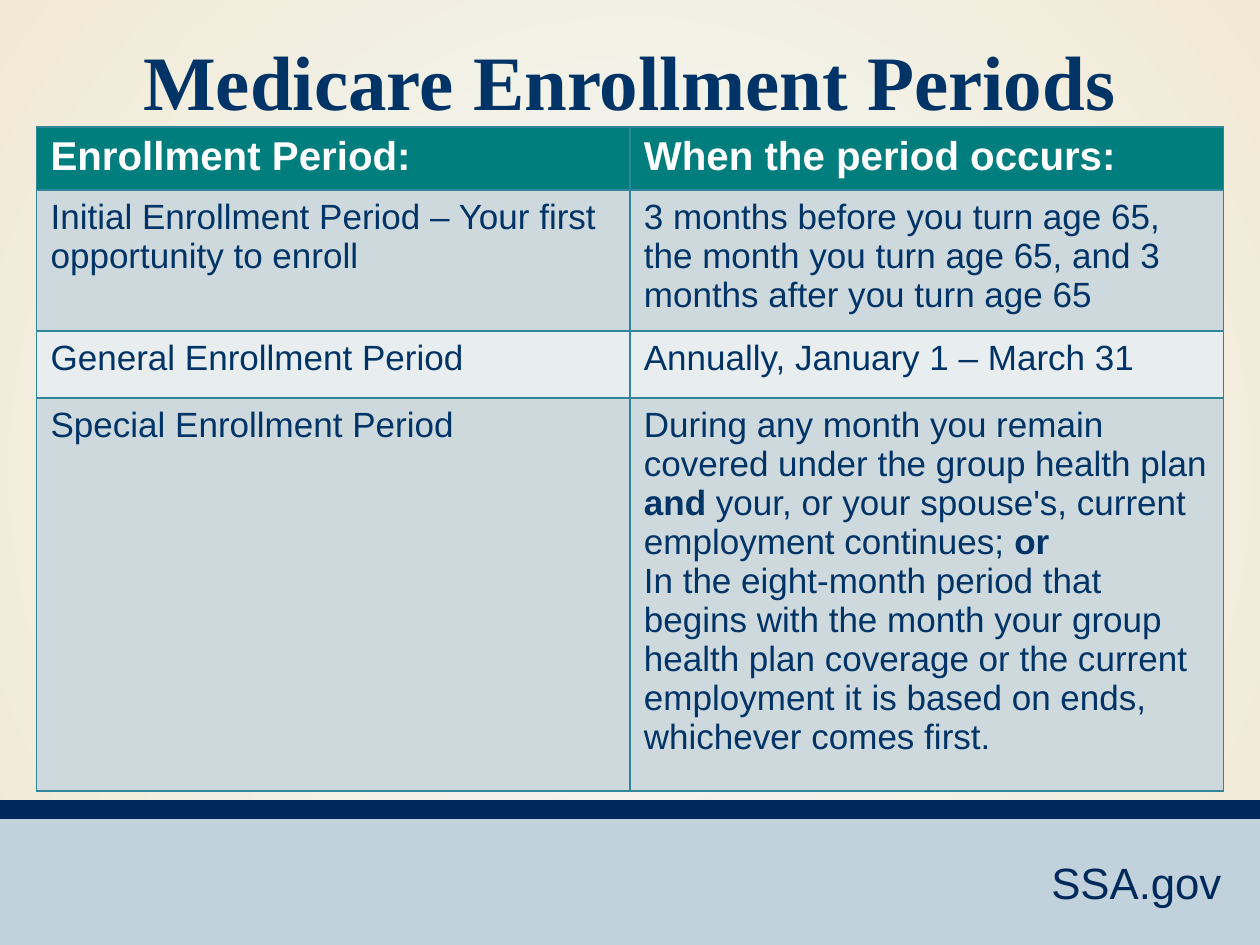
from dataclasses import dataclass

from lxml import etree
from pptx import Presentation
from pptx.dml.color import RGBColor
from pptx.enum.shapes import MSO_SHAPE
from pptx.enum.text import MSO_ANCHOR, PP_ALIGN
from pptx.oxml import parse_xml
from pptx.oxml.ns import nsdecls, qn
from pptx.util import Cm, Pt

RECTANGLE = MSO_SHAPE.RECTANGLE
BOTTOM = MSO_ANCHOR.BOTTOM
LEFT, CENTER, RIGHT = PP_ALIGN.LEFT, PP_ALIGN.CENTER, PP_ALIGN.RIGHT

SLIDE_WIDTH, SLIDE_HEIGHT = 25.4, 19.05
NAVY, INK, WHITE = "00295B", "003366", "FFFFFF"
BORDER = "31859B"


@dataclass(frozen=True)
class Style:
    size: float
    color: str
    name: str = "Arial"
    bold: bool = False
    align: int = LEFT


@dataclass(frozen=True)
class Band:
    top: float
    height: float
    color: str


@dataclass(frozen=True)
class Label:
    text: str
    left: float
    top: float
    width: float
    height: float
    style: Style
    bottom_margin: float


@dataclass(frozen=True)
class Row:
    height: float
    fill: str
    style: Style
    period: str
    timing: tuple


HEADING = Style(23, WHITE, bold=True)
BODY = Style(20, INK)

BANDS = [Band(16.38, 2.67, "C1D2DC"), Band(16.13, 0.38, NAVY)]

LABELS = [
    Label("SSA.gov", 17.07, 17.12, 7.8, 1.32, Style(25, NAVY, align=RIGHT), 0.13),
    Label("Medicare Enrollment Periods", 0, 0.43, SLIDE_WIDTH, 2.11,
          Style(44, INK, "Times New Roman", True, CENTER), 0),
]

ROWS = [
    Row(1.21, "007D7D", HEADING, "Enrollment Period:", ("When the period occurs:",)),
    Row(2.66, "CED9DE", BODY,
        "Initial Enrollment Period – Your first opportunity to enroll",
        ("3 months before you turn age 65, the month you turn age 65, "
         "and 3 months after you turn age 65",)),
    Row(1.35, "E8EDEF", BODY, "General Enrollment Period",
        ("Annually, January 1 – March 31",)),
    Row(7.38, "CED9DE", BODY, "Special Enrollment Period",
        ("During any month you remain covered under the group health plan "
         "*and* your, or your spouse's, current employment continues; *or*",
         "In the eight-month period that begins with the month your group health "
         "plan coverage or the current employment it is based on ends, "
         "whichever comes first.")),
]


def rgb(color: str) -> RGBColor:
    return RGBColor.from_string(color)


def write_paragraph(paragraph, text: str, style: Style) -> None:
    paragraph.alignment = style.align
    paragraph.font.name = style.name
    paragraph.font.size = Pt(style.size)
    paragraph.font.bold = style.bold
    paragraph.font.color.rgb = rgb(style.color)
    for index, part in enumerate(text.split("*")):
        if part:
            run = paragraph.add_run()
            run.text = part
            if index % 2:
                run.font.bold = True


def paint_background(slide) -> None:
    fill = slide.background.fill
    fill.gradient()
    for stop, color in zip(fill.gradient_stops, ("F3FAFB", "F2E9D5")):
        stop.color.rgb = rgb(color)
    gradient = slide.background._cSld.find(".//" + qn("a:gradFill"))
    gradient.replace(gradient.find(qn("a:lin")), parse_xml(
        f'<a:path {nsdecls("a")} path="circle">'
        '<a:fillToRect l="50000" t="50000" r="50000" b="50000"/></a:path>'))


def draw_band(slide, band: Band) -> None:
    shape = slide.shapes.add_shape(
        RECTANGLE, 0, Cm(band.top), Cm(SLIDE_WIDTH), Cm(band.height))
    shape.shadow.inherit = False
    shape.fill.solid()
    shape.fill.fore_color.rgb = rgb(band.color)
    shape.line.fill.background()


def draw_label(slide, label: Label) -> None:
    shape = slide.shapes.add_textbox(
        Cm(label.left), Cm(label.top), Cm(label.width), Cm(label.height))
    frame = shape.text_frame
    frame.word_wrap = True
    frame.vertical_anchor = BOTTOM
    frame.margin_bottom = Cm(label.bottom_margin)
    write_paragraph(frame.paragraphs[0], label.text, label.style)


def add_borders(cell) -> None:
    properties = cell._tc.get_or_add_tcPr()
    for side in ("lnL", "lnR", "lnT", "lnB"):
        line = etree.SubElement(properties, qn(f"a:{side}"), w=str(Pt(1)))
        fill = etree.SubElement(line, qn("a:solidFill"))
        etree.SubElement(fill, qn("a:srgbClr"), val=BORDER)


def fill_cell(cell, texts: tuple, row: Row) -> None:
    cell.margin_left = cell.margin_right = Cm(0.28)
    cell.margin_top = cell.margin_bottom = Cm(0.15)
    add_borders(cell)
    cell.fill.solid()
    cell.fill.fore_color.rgb = rgb(row.fill)
    frame = cell.text_frame
    for index, text in enumerate(texts):
        paragraph = frame.add_paragraph() if index else frame.paragraphs[0]
        write_paragraph(paragraph, text, row.style)


def draw_period_table(slide, rows: list[Row]) -> None:
    table = slide.shapes.add_table(
        len(rows), 2, Cm(0.74), Cm(2.56), Cm(23.92),
        Cm(sum(row.height for row in rows))).table
    table.horz_banding = False
    for index, row in enumerate(rows):
        table.rows[index].height = Cm(row.height)
        fill_cell(table.cell(index, 0), (row.period,), row)
        fill_cell(table.cell(index, 1), row.timing, row)


def main() -> None:
    presentation = Presentation()
    presentation.slide_width = Cm(SLIDE_WIDTH)
    presentation.slide_height = Cm(SLIDE_HEIGHT)
    slide = presentation.slides.add_slide(presentation.slide_layouts[6])
    paint_background(slide)
    for band in BANDS:
        draw_band(slide, band)
    for label in LABELS:
        draw_label(slide, label)
    draw_period_table(slide, ROWS)
    presentation.save("out.pptx")


if __name__ == "__main__":
    main()
